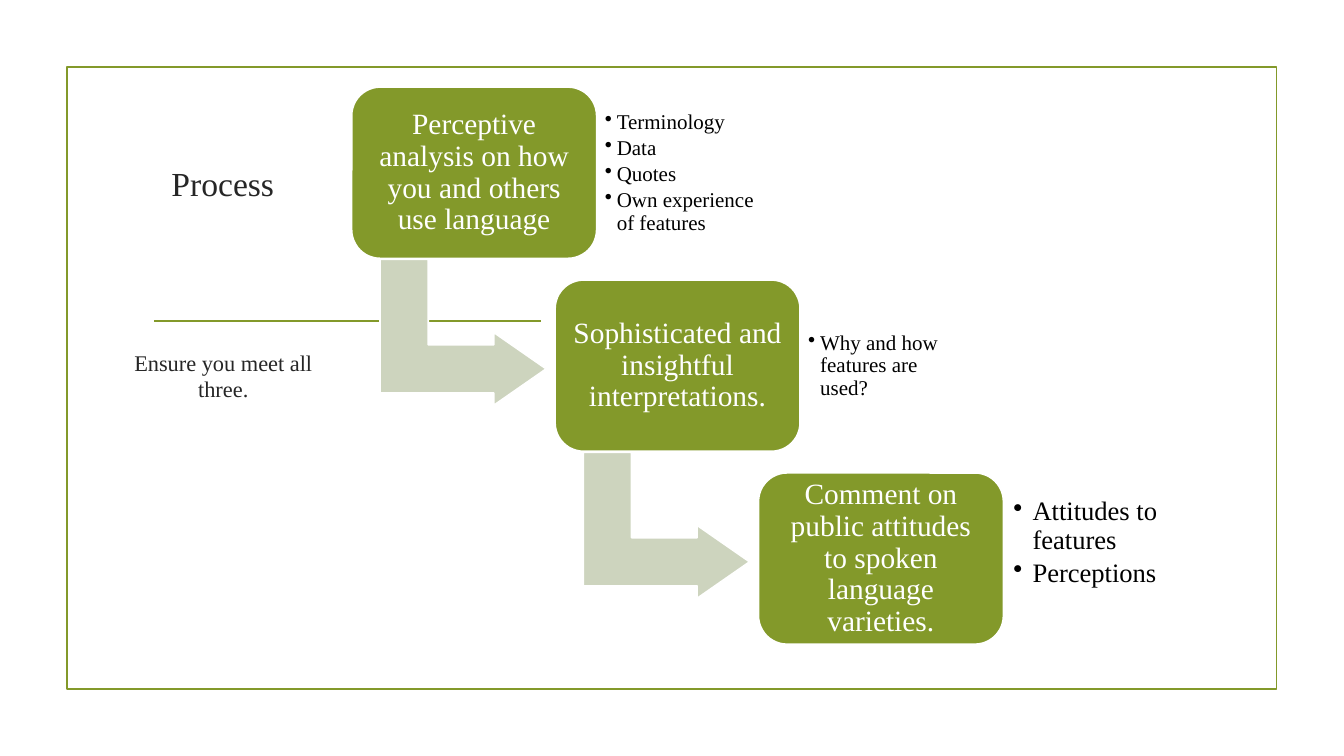
from lxml import etree
from pptx import Presentation
from pptx.dml.color import RGBColor
from pptx.enum import shapes, text
from pptx.oxml import ns
from pptx.util import Pt

GREEN = RGBColor(0x83, 0x99, 0x2A)
SAGE = RGBColor(0xCD, 0xD4, 0xBE)
WHITE = RGBColor(0xFF, 0xFF, 0xFF)
BLACK = RGBColor(0, 0, 0)
CHARCOAL = RGBColor(0x26, 0x26, 0x26)
FONT = "Times New Roman"

STEP_LEFT, STEP_TOP = 251.2, 62.2
STEP_WIDTH, STEP_HEIGHT = 175, 122.4
STEP_RIGHTWARD, STEP_DOWNWARD = 145.3, 137.8
STEPS = [
    ("Perceptive analysis on how you and others use language",
     ["Terminology", "Data", "Quotes", "Own experience of features"], 15, 8.6, 5.8, 5.8),
    ("Sophisticated and insightful interpretations.",
     ["Why and how features are used?"], 15, 8.6, 5.8, 5.8),
    ("Comment on public attitudes to spoken language varieties.",
     ["Attitudes to features", "Perceptions"], 19, 13.7, 7.2, 30),
]


def set_margins(frame, left, top, right, bottom):
    """Set the inner margins of a text frame."""
    frame.margin_left, frame.margin_top = Pt(left), Pt(top)
    frame.margin_right, frame.margin_bottom = Pt(right), Pt(bottom)


def style_paragraph(paragraph, size, color, align, spacing=1.0):
    """Format a paragraph and its runs."""
    paragraph.alignment = align
    paragraph.line_spacing = spacing
    for run in paragraph.runs:
        run.font.name, run.font.size = FONT, Pt(size)
        run.font.color.rgb = color


def write_centred(frame, words, size, color, anchor, spacing=1.0):
    """Fill a frame with one centred paragraph."""
    frame.word_wrap = True
    frame.auto_size = text.MSO_AUTO_SIZE.NONE
    frame.vertical_anchor = anchor
    frame.text = words
    style_paragraph(frame.paragraphs[0], size, color, text.PP_ALIGN.CENTER, spacing)


def add_block(slide, kind, left, top, width, height, fill, outline):
    """Add a preset shape without shadow; fill may be None."""
    block = slide.shapes.add_shape(kind, Pt(left), Pt(top), Pt(width), Pt(height))
    block.shadow.inherit = False
    if fill is None:
        block.fill.background()
    else:
        block.fill.solid()
        block.fill.fore_color.rgb = fill
    block.line.color.rgb = outline
    block.line.width = Pt(1.25)
    return block


def add_rule(slide, left, right, top):
    """Add the horizontal rule below the title."""
    rule = slide.shapes.add_connector(
        shapes.MSO_CONNECTOR.STRAIGHT, Pt(left), Pt(top), Pt(right), Pt(top))
    rule.line.color.rgb = GREEN
    rule.line.width = Pt(1.25)
    etree.SubElement(rule.element.spPr, ns.qn("a:effectLst"))


def add_bend(slide, left, top):
    """Add the bent arrow that leads from one step to the next."""
    bend = add_block(slide, shapes.MSO_SHAPE.BENT_UP_ARROW,
                     left + 27.4, top + 115.8, 104.4, 118.8, SAGE, WHITE)
    bend.rotation = 90
    for index, value in enumerate((0.33, 0.25, 0.36)):
        bend.adjustments[index] = value


def add_step(slide, left, top, words):
    """Add the rounded box of a step."""
    step = add_block(slide, shapes.MSO_SHAPE.ROUNDED_RECTANGLE,
                     left, top, STEP_WIDTH, STEP_HEIGHT, GREEN, WHITE)
    set_margins(step.text_frame, 6.5, 6.5, 6.5, 6.5)
    write_centred(step.text_frame, words, 21, WHITE, text.MSO_ANCHOR.MIDDLE, 0.9)


def add_details(slide, left, top, details, size, indent, margin, bottom):
    """Add the bulleted details beside a step."""
    box = slide.shapes.add_textbox(Pt(left), Pt(top), Pt(127.4), Pt(99.4))
    frame = box.text_frame
    frame.word_wrap = True
    frame.vertical_anchor = text.MSO_ANCHOR.MIDDLE
    set_margins(frame, margin, margin, margin, bottom)
    frame.text = "\n".join(details)
    for paragraph in frame.paragraphs:
        properties = paragraph._p.get_or_add_pPr()
        properties.set("marL", str(Pt(indent)))
        properties.set("indent", str(-Pt(indent)))
        etree.SubElement(properties, ns.qn("a:buChar"), char="•")
        style_paragraph(paragraph, size, BLACK, text.PP_ALIGN.LEFT, 0.9)
        paragraph.space_after = Pt(round(size * 0.15, 2))


def add_heading(slide):
    """Place the title and the note below it."""
    title = slide.shapes.title
    title.left, title.top, title.width, title.height = Pt(70.6), Pt(86.4), Pt(177.1), Pt(62.6)
    write_centred(title.text_frame, "Process", 24, CHARCOAL, text.MSO_ANCHOR.BOTTOM)
    note = slide.shapes.add_textbox(Pt(79.2), Pt(245.5), Pt(160.6), Pt(163.4))
    write_centred(note.text_frame, "Ensure you meet all three.", 16, CHARCOAL,
                  text.MSO_ANCHOR.TOP)


def main():
    """Build the process slide."""
    deck = Presentation()
    deck.slide_width, deck.slide_height = Pt(960), Pt(540)
    slide = deck.slides.add_slide(deck.slide_layouts[5])
    add_block(slide, shapes.MSO_SHAPE.RECTANGLE, 47.8, 48, 864, 444.2, None, GREEN)
    add_rule(slide, 110.2, 386.6, 229.5)
    add_heading(slide)
    for index, (words, details, size, indent, margin, bottom) in enumerate(STEPS):
        left = STEP_LEFT + index * STEP_RIGHTWARD
        top = STEP_TOP + index * STEP_DOWNWARD
        if index < len(STEPS) - 1:
            add_bend(slide, left, top)
        add_step(slide, left, top, words)
        add_details(slide, left + STEP_WIDTH, top + 11.8, details, size, indent, margin, bottom)
    deck.save("out.pptx")


if __name__ == "__main__":
    main()
